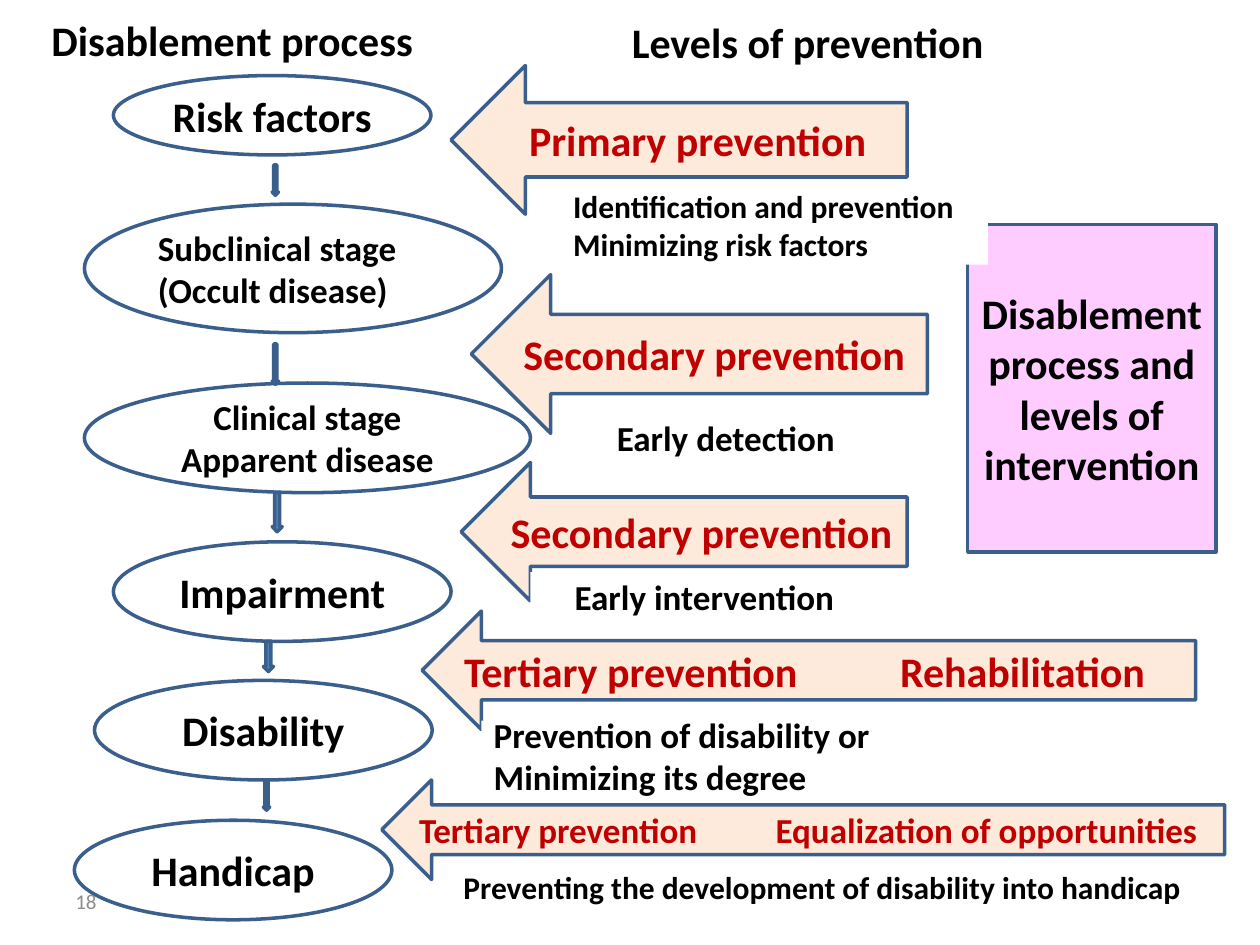
from lxml import etree
from pptx import Presentation
from pptx.dml.color import RGBColor
from pptx.enum.shapes import MSO_SHAPE
from pptx.enum.text import MSO_ANCHOR, MSO_AUTO_SIZE, PP_ALIGN
from pptx.oxml.ns import qn
from pptx.util import Inches, Pt

BLACK = RGBColor(0x00, 0x00, 0x00)
WHITE = RGBColor(0xFF, 0xFF, 0xFF)
RED = RGBColor(0xC0, 0x00, 0x00)
GRAY = RGBColor(0x8C, 0x8C, 0x8C)
PEACH = RGBColor(0xFD, 0xEA, 0xDA)
PINK = RGBColor(0xFF, 0xCC, 0xFF)
BLUE = RGBColor(0x4F, 0x81, 0xBD)
DARK_BLUE = RGBColor(0x3A, 0x5F, 0x8C)

RECTANGLE = MSO_SHAPE.RECTANGLE
OVAL = MSO_SHAPE.OVAL
LEFT_ARROW = MSO_SHAPE.LEFT_ARROW
DOWN_ARROW = MSO_SHAPE.DOWN_ARROW
LEFT, CENTER = PP_ALIGN.LEFT, PP_ALIGN.CENTER
MIDDLE = MSO_ANCHOR.MIDDLE
NO_AUTOFIT = MSO_AUTO_SIZE.NONE


class SlideBuilder:
    font_name = "Calibri"
    line_width = Pt(2)

    def __init__(self, slide):
        self.slide = slide

    def set_text(self, shape, text, size, color=BLACK, align=CENTER, bold=True):
        frame = shape.text_frame
        frame.text = text
        frame.word_wrap = True
        frame.auto_size = NO_AUTOFIT
        frame.vertical_anchor = MIDDLE
        side_margin = 0.05 if align == CENTER else 0.1
        frame.margin_left = frame.margin_right = Inches(side_margin)
        frame.margin_top = frame.margin_bottom = Inches(0.05)
        for paragraph in frame.paragraphs:
            paragraph.alignment = align
            for run in paragraph.runs:
                run.font.name = self.font_name
                run.font.size = Pt(size)
                run.font.bold = bold
                run.font.color.rgb = color

    def paint(self, shape, fill, outlined=True):
        shape.fill.solid()
        shape.fill.fore_color.rgb = fill
        if outlined:
            shape.line.color.rgb = DARK_BLUE
            shape.line.width = self.line_width
        else:
            shape.line.fill.background()

    def add_shape(self, kind, box, fill, outlined=True):
        shape = self.slide.shapes.add_shape(kind, *map(Inches, box))
        shape.shadow.inherit = False
        self.paint(shape, fill, outlined)
        return shape

    def add_title(self, text, box):
        title = self.slide.shapes.title
        title.left, title.top, title.width, title.height = map(Inches, box)
        self.paint(title, PINK)
        self.set_text(title, text, 24)

    def add_stage(self, text, box, size=24, align=CENTER):
        self.set_text(self.add_shape(OVAL, box, WHITE), text, size, align=align)

    def add_level(self, text, box, size=24, align=LEFT, tab=None):
        arrow = self.add_shape(LEFT_ARROW, box, PEACH)
        self.set_text(arrow, text, size, RED, align)
        if tab:
            properties = arrow.text_frame.paragraphs[0]._p.get_or_add_pPr()
            tab_list = etree.SubElement(properties, qn("a:tabLst"))
            etree.SubElement(tab_list, qn("a:tab"), pos=str(Inches(tab)), algn="l")

    def add_label(self, text, box, size, align=LEFT):
        label = self.add_shape(RECTANGLE, box, WHITE, outlined=False)
        self.set_text(label, text, size, align=align)

    def add_step(self, box):
        self.add_shape(DOWN_ARROW, box, BLUE)

    def add_page_number(self, text, box):
        text_box = self.slide.shapes.add_textbox(*map(Inches, box))
        self.set_text(text_box, text, 12, GRAY, LEFT, bold=False)


def main():
    presentation = Presentation()
    presentation.slide_width = Inches(10)
    presentation.slide_height = Inches(7.5)
    slide = presentation.slides.add_slide(presentation.slide_layouts[5])
    builder = SlideBuilder(slide)

    builder.add_title("Disablement process and levels of intervention",
                      (7.68, 1.78, 1.97, 2.6))

    # Column headings
    builder.add_label("Disablement process", (0.31, 0, 3.35, 0.63), 24)
    builder.add_label("Levels of prevention", (4.4, 0, 4.02, 0.66), 24, CENTER)

    # Stages of the disablement process
    builder.add_stage("Risk factors", (0.9, 0.6, 2.52, 0.63))
    builder.add_stage("Subclinical stage\n(Occult disease)",
                      (0.67, 1.62, 3.31, 1.02), 20, LEFT)
    builder.add_stage("Clinical stage\nApparent disease", (0.67, 3.04, 3.54, 0.87), 20)
    builder.add_stage("Impairment", (0.9, 4.3, 2.68, 0.79))
    builder.add_stage("Disability", (0.75, 5.4, 2.68, 0.79))
    builder.add_stage("Handicap", (0.59, 6.51, 2.52, 0.79))

    # Levels of prevention with their explanations, back to front
    builder.add_level("Primary prevention", (3.58, 0.52, 3.62, 1.18), align=CENTER)
    builder.add_level("Secondary prevention", (3.74, 2.18, 3.62, 1.26))
    builder.add_label("Early detection", (4.5, 3.28, 2.52, 0.39), 20, CENTER)
    builder.add_level("Secondary prevention", (3.66, 3.67, 3.54, 1.1), align=CENTER)
    builder.add_label("Early intervention", (4.21, 4.54, 2.76, 0.39), 20, CENTER)
    builder.add_level("Tertiary prevention\tRehabilitation",
                      (3.35, 4.85, 6.14, 0.94), tab=3.46)
    builder.add_label("Prevention of disability or\nMinimizing its degree",
                      (3.82, 5.72, 5.91, 0.55), 20)
    builder.add_label("Identification and prevention\nMinimizing risk factors",
                      (4.45, 1.47, 3.39, 0.63), 18)
    builder.add_level("Tertiary prevention\tEqualization of opportunities",
                      (3.03, 6.19, 6.69, 0.79), 20, tab=2.83)
    builder.add_label("Preventing the development of disability into handicap",
                      (3.58, 6.82, 6.14, 0.44), 18)

    # Steps between stages
    for box in [
        (2.16, 1.31, 0.05, 0.24),
        (2.16, 2.73, 0.05, 0.32),
        (2.16, 3.91, 0.08, 0.31),
        (2.09, 5.09, 0.08, 0.24),
        (2.09, 6.19, 0.05, 0.24),
    ]:
        builder.add_step(box)

    builder.add_page_number("18", (0.5, 6.95, 2.33, 0.4))
    presentation.save("out.pptx")


if __name__ == "__main__":
    main()
